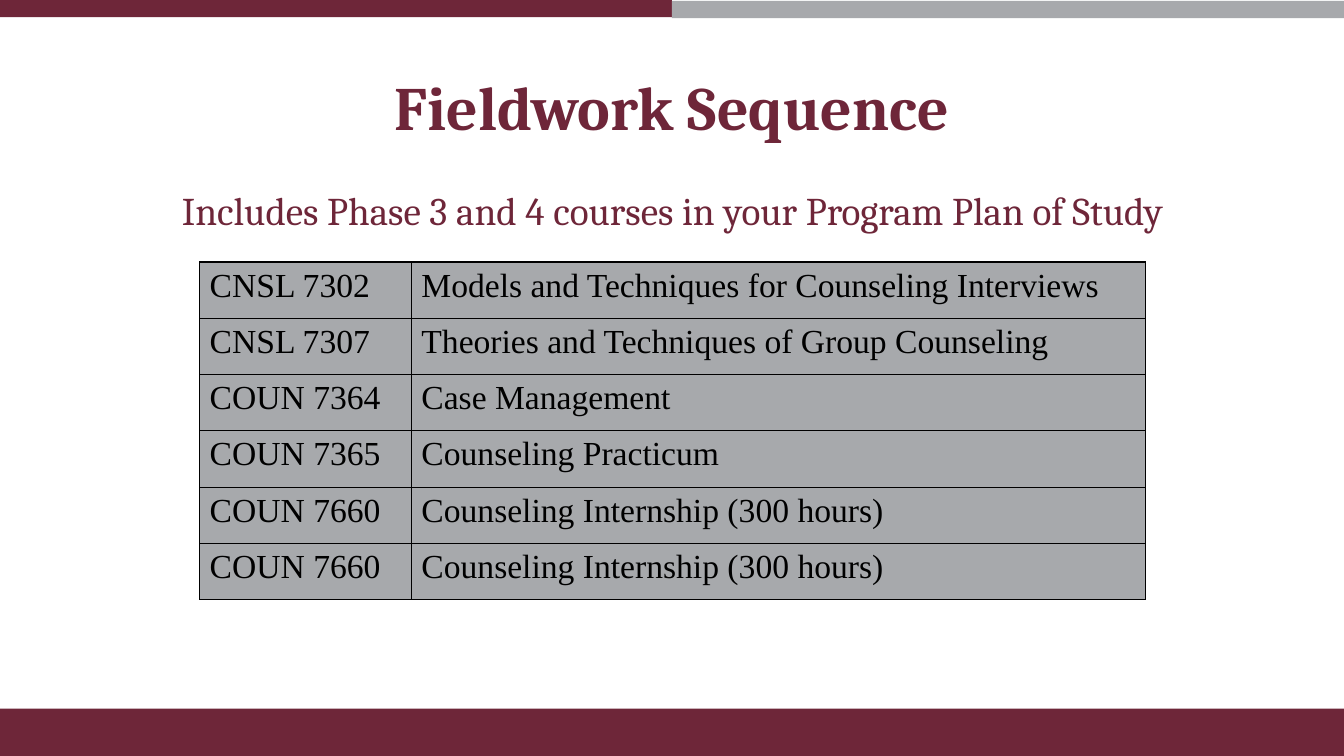
import pptx
import pptx.util
import pptx.dml.color
import pptx.enum.text
import pptx.enum.shapes
import pptx.oxml

Inches = pptx.util.Inches
Pt = pptx.util.Pt
MAROON = pptx.dml.color.RGBColor(0x6E, 0x26, 0x39)
GRAY = pptx.dml.color.RGBColor(0xA7, 0xA9, 0xAC)
BLACK = pptx.dml.color.RGBColor(0, 0, 0)
NS = "http://schemas.openxmlformats.org/drawingml/2006/main"

deck = pptx.Presentation()
deck.slide_width = Inches(13.33)
deck.slide_height = Inches(7.5)
wide, high = deck.slide_width, deck.slide_height
slide = deck.slides.add_slide(deck.slide_layouts[6])

middle = pptx.enum.text.MSO_ANCHOR.MIDDLE
upper = pptx.enum.text.MSO_ANCHOR.TOP
heads = [
    ("Fieldwork Sequence", 0.35, 1.5, 44, True, middle, 0),
    ("Includes Phase 3 and 4 courses in your Program Plan of Study", 1.85, 0.7, 28, False, upper, 10),
]
for text, top, tall, size, bold, anchor, gap in heads:
    box = slide.shapes.add_textbox(0, Inches(top), wide, Inches(tall))
    frame = box.text_frame
    frame.word_wrap = True
    frame.vertical_anchor = anchor
    para = frame.paragraphs[0]
    para.text = text
    para.alignment = pptx.enum.text.PP_ALIGN.CENTER
    para.line_spacing = 0.9
    para.space_before = Pt(gap)
    para.font.name = "Cambria"
    para.font.size = Pt(size)
    para.font.bold = bold
    para.font.color.rgb = MAROON

courses = [
    ("CNSL 7302", "Models and Techniques for Counseling Interviews"),
    ("CNSL 7307", "Theories and Techniques of Group Counseling"),
    ("COUN 7364", "Case Management"),
    ("COUN 7365", "Counseling Practicum"),
    ("COUN 7660", "Counseling Internship (300 hours)"),
    ("COUN 7660", "Counseling Internship (300 hours)"),
]
table = slide.shapes.add_table(
    len(courses), 2, Inches(1.98), Inches(2.6), Inches(9.38), Inches(3.35)
).table
table.first_row = False
table.horz_banding = False
table.columns[0].width = Inches(2.1)
table.columns[1].width = Inches(7.28)
for row, course in enumerate(courses):
    for col, text in enumerate(course):
        cell = table.cell(row, col)
        para = cell.text_frame.paragraphs[0]
        para.text = text
        para.font.name = "Times New Roman"
        para.font.size = Pt(24)
        para.font.color.rgb = BLACK
        props = cell._tc.get_or_add_tcPr()
        for side in ("lnL", "lnR", "lnT", "lnB"):
            props.append(pptx.oxml.parse_xml(
                f'<a:{side} xmlns:a="{NS}" w="{Pt(1)}"><a:solidFill>'
                f'<a:srgbClr val="{BLACK}"/></a:solidFill></a:{side}>'
            ))
        cell.fill.solid()
        cell.fill.fore_color.rgb = GRAY

half = wide // 2
thin = Inches(0.17)
base = Inches(0.47)
bars = [
    (0, 0, half, thin, MAROON),
    (half, Inches(0.01), half, thin, GRAY),
    (0, high - base, wide, base, MAROON),
]
for left, top, width, tall, color in bars:
    bar = slide.shapes.add_shape(
        pptx.enum.shapes.MSO_SHAPE.RECTANGLE, left, top, width, tall
    )
    bar.shadow.inherit = False
    bar.fill.solid()
    bar.fill.fore_color.rgb = color
    bar.line.fill.background()

deck.save("out.pptx")
